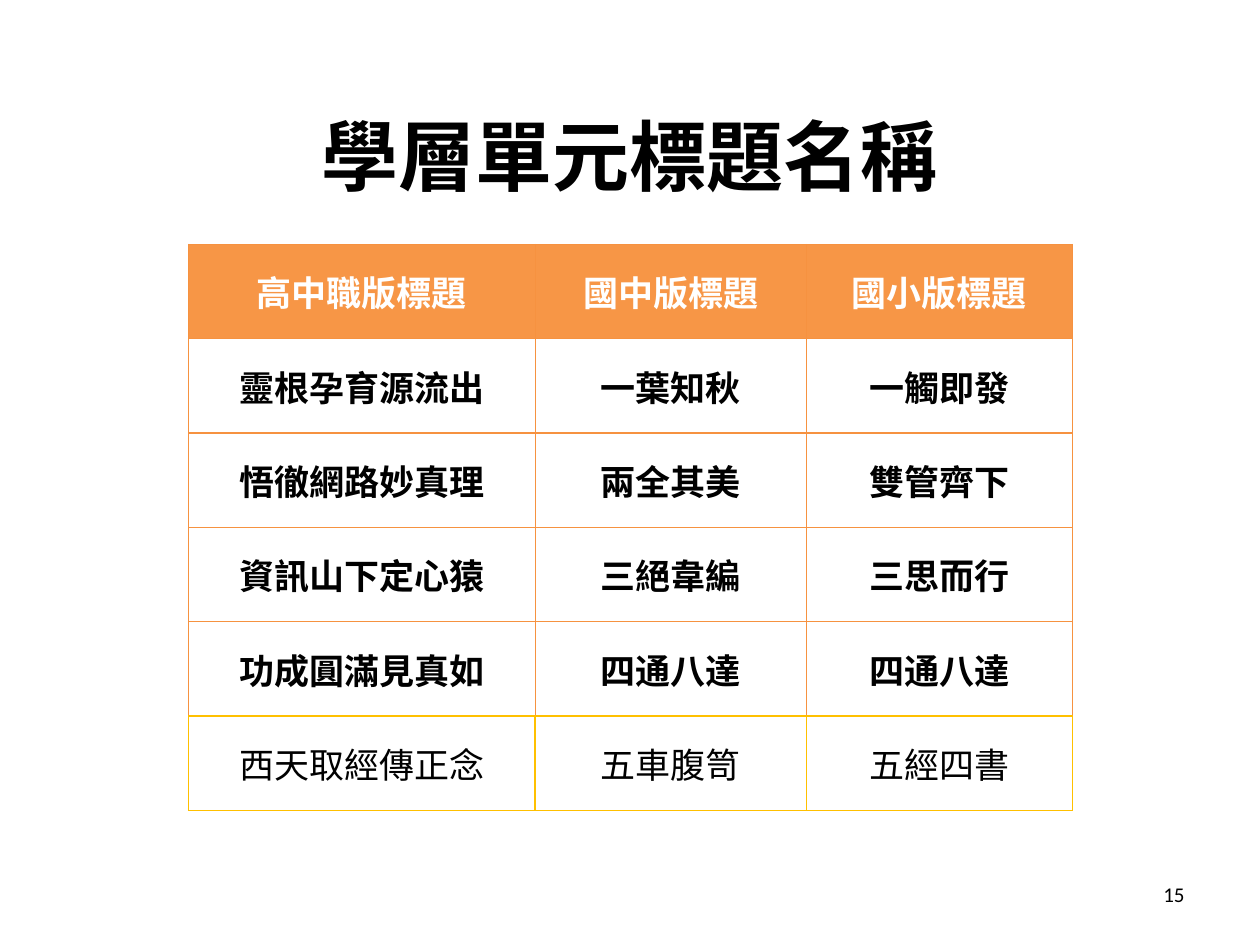
from lxml.etree import SubElement
from pptx import Presentation
from pptx.dml.color import RGBColor
from pptx.enum.text import MSO_ANCHOR as Anchor, PP_ALIGN as Align
from pptx.oxml.ns import qn
from pptx.util import Pt

BLACK = RGBColor(0x00, 0x00, 0x00)
WHITE = RGBColor(0xFF, 0xFF, 0xFF)
HEADER_ORANGE = RGBColor(0xF7, 0x96, 0x46)
BORDER_ORANGE = RGBColor(0xF6, 0x92, 0x40)
GOLD = RGBColor(0xFF, 0xC0, 0x00)

CJK_FONT = "Noto Sans CJK SC"
COLUMN_WIDTHS = (198, 155, 152)
ROW_HEIGHT = 53.9
ROWS = (
    ("高中職版標題", "國中版標題", "國小版標題"),
    ("靈根孕育源流出", "一葉知秋", "一觸即發"),
    ("悟徹網路妙真理", "兩全其美", "雙管齊下"),
    ("資訊山下定心猿", "三絕韋編", "三思而行"),
    ("功成圓滿見真如", "四通八達", "四通八達"),
    ("西天取經傳正念", "五車腹笥", "五經四書"),
)


class SlideBuilder:
    def __init__(self, slide):
        self.slide = slide

    def add_run(self, frame, text, size, align, font=CJK_FONT, color=BLACK, bold=False):
        paragraph = frame.paragraphs[0]
        paragraph.alignment = align
        run = paragraph.add_run()
        run.text = text
        run.font.name = font
        run.font.size = Pt(size)
        run.font.bold = bold
        run.font.color.rgb = color
        SubElement(run._r.get_or_add_rPr(), qn("a:ea"), typeface=font)

    def text(self, left, top, width, height, text, size, align, **style):
        box = self.slide.shapes.add_textbox(Pt(left), Pt(top), Pt(width), Pt(height))
        frame = box.text_frame
        frame.word_wrap = True
        frame.vertical_anchor = Anchor.MIDDLE
        self.add_run(frame, text, size, align, **style)

    def border(self, cell, side, color, width):
        properties = cell._tc.get_or_add_tcPr()
        line = SubElement(properties, qn(f"a:ln{side}"), w=str(Pt(width)))
        fill = SubElement(line, qn("a:solidFill"))
        SubElement(fill, qn("a:srgbClr"), val=str(color))

    def cell(self, cell, text, is_header, is_last, gold_below):
        cell.margin_left = cell.margin_right = Pt(5)
        cell.margin_top = cell.margin_bottom = 0
        cell.vertical_anchor = Anchor.MIDDLE
        for side in "LRTB":
            is_gold = is_last or (gold_below and side == "B")
            color, width = (GOLD, 1) if is_gold else (BORDER_ORANGE, 0.75)
            self.border(cell, side, color, width)
        if is_header:
            cell.fill.solid()
            cell.fill.fore_color.rgb = HEADER_ORANGE
        else:
            cell.fill.background()
        self.add_run(cell.text_frame, text, 20, Align.CENTER,
                     color=WHITE if is_header else BLACK, bold=not is_last)

    def table(self, left, top, widths, row_height, rows):
        frame = self.slide.shapes.add_table(
            len(rows), len(widths), Pt(left), Pt(top),
            Pt(sum(widths)), Pt(row_height * len(rows)))
        table = frame.table
        table.first_row = table.horz_banding = False
        for column, width in zip(table.columns, widths):
            column.width = Pt(width)
        last = len(rows) - 1
        for index, texts in enumerate(rows):
            table.rows[index].height = Pt(row_height)
            for column_index, text in enumerate(texts):
                self.cell(table.cell(index, column_index), text,
                          index == 0, index == last, index == last - 1)


def main():
    presentation = Presentation()
    presentation.slide_width, presentation.slide_height = Pt(720), Pt(540)
    builder = SlideBuilder(presentation.slides.add_slide(presentation.slide_layouts[6]))

    # Title
    builder.text(36, 43.2, 648, 90, "學層單元標題名稱", 44, Align.CENTER, bold=True)

    # Unit titles by school level
    builder.table(107.8, 139.7, COLUMN_WIDTHS, ROW_HEIGHT, ROWS)

    # Page number
    builder.text(516, 492, 168, 37.5, "15", 12, Align.RIGHT, font="Calibri")

    presentation.save("out.pptx")


if __name__ == "__main__":
    main()
